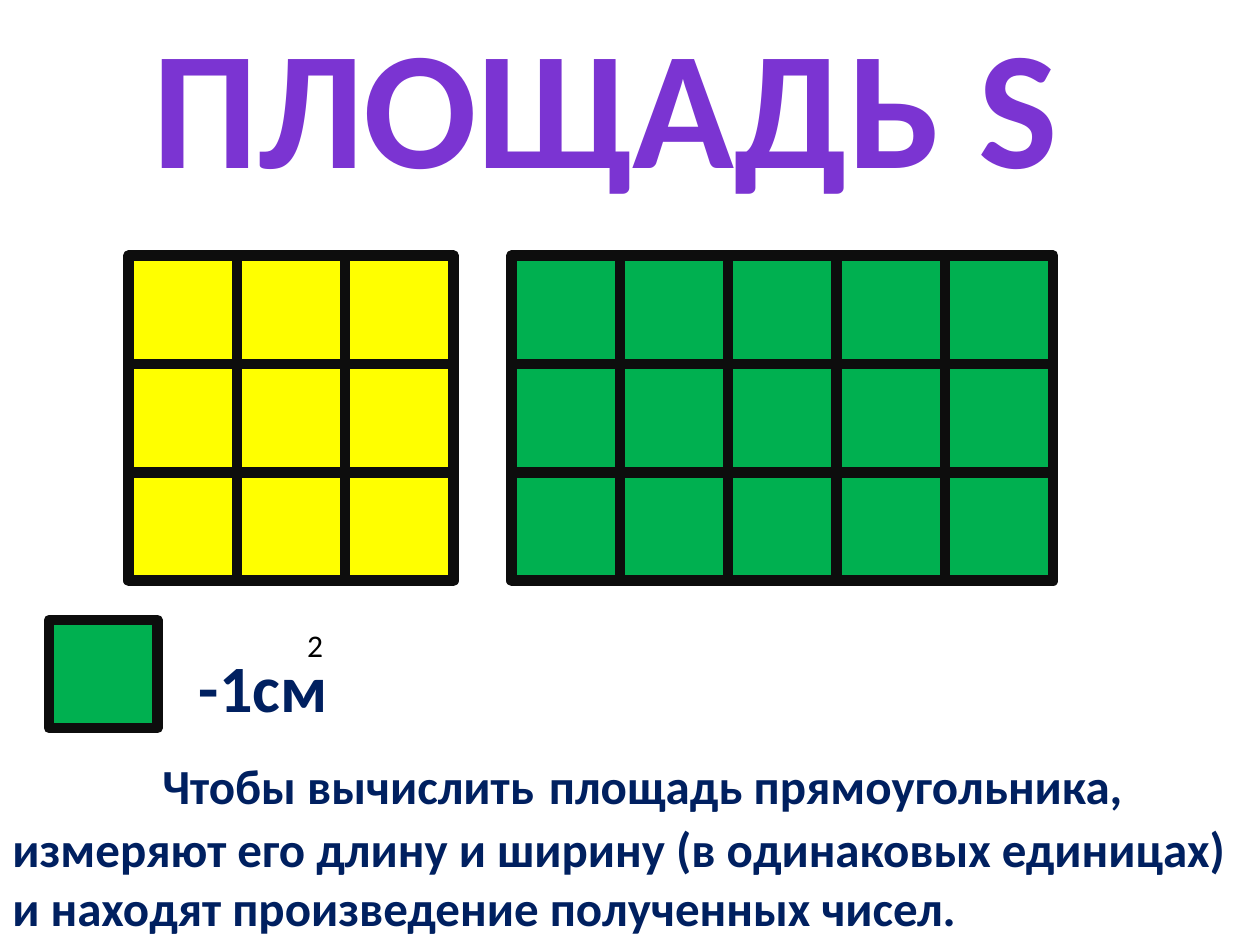
from dataclasses import dataclass

from pptx import Presentation
from pptx.dml.color import RGBColor
from pptx.enum.shapes import MSO_SHAPE
from pptx.enum.text import MSO_ANCHOR, PP_ALIGN
from pptx.slide import Slide
from pptx.text.text import Font
from pptx.util import Inches, Pt


@dataclass(frozen=True)
class Theme:
    font: str = "Calibri"
    title: str = "7B34D2"
    body: str = "002060"
    black: str = "000000"
    border: str = "0D0D0D"
    yellow: str = "FFFF00"
    green: str = "00B050"
    title_size: float = 96
    unit_size: float = 37.8
    rule_size: float = 28
    exponent_size: float = 18
    border_width: float = 6
    paragraph_gap: float = 7.5


@dataclass(frozen=True)
class SquareGrid:
    left: float
    top: float
    columns: int
    rows: int
    color: str


THEME = Theme()
WIDTH, HEIGHT = 10, 7.5
CELL = 0.86
GRIDS = (
    SquareGrid(1.02, 2.03, 3, 3, THEME.yellow),
    SquareGrid(4.06, 2.03, 5, 3, THEME.green),
    SquareGrid(0.39, 4.92, 1, 1, THEME.green),
)


def style_font(font: Font, size: float, color: str, bold: bool = True) -> None:
    font.name = THEME.font
    font.size = Pt(size)
    font.bold = bold
    font.color.rgb = RGBColor.from_string(color)


def add_title(slide: Slide) -> None:
    title = slide.shapes.title
    title.left, title.top = 0, 0
    title.width, title.height = Inches(9.61), Inches(1.61)
    frame = title.text_frame
    frame.text = "ПЛОЩАДЬ S"
    frame.vertical_anchor = MSO_ANCHOR.MIDDLE
    para = frame.paragraphs[0]
    para.alignment = PP_ALIGN.CENTER
    style_font(para.font, THEME.title_size, THEME.title)


def add_square_grid(slide: Slide, grid: SquareGrid) -> None:
    for row in range(grid.rows):
        for column in range(grid.columns):
            square = slide.shapes.add_shape(
                MSO_SHAPE.RECTANGLE,
                Inches(grid.left + column * CELL),
                Inches(grid.top + row * CELL),
                Inches(CELL),
                Inches(CELL),
            )
            square.shadow.inherit = False
            square.fill.solid()
            square.fill.fore_color.rgb = RGBColor.from_string(grid.color)
            square.line.color.rgb = RGBColor.from_string(THEME.border)
            square.line.width = Pt(THEME.border_width)


def add_explanation(slide: Slide) -> None:
    box = slide.shapes.add_textbox(0, Inches(5.08), Inches(WIDTH), Inches(2.23))
    frame = box.text_frame
    frame.word_wrap = True

    unit = frame.paragraphs[0]
    unit.text = "-1см"
    style_font(unit.font, THEME.unit_size, THEME.body)

    rule = frame.add_paragraph()
    rule.space_before = Pt(THEME.paragraph_gap)
    style_font(rule.font, THEME.rule_size, THEME.body)
    rule.add_run().text = "Чтобы вычислить"
    space = rule.add_run()
    space.text = " "
    space.font.size = Pt(THEME.unit_size)
    rule.add_run().text = (
        "площадь прямоугольника, измеряют его длину и ширину "
        "(в одинаковых единицах) и находят произведение полученных чисел."
    )

    for para, indent in ((unit, 1.48), (rule, 1.19)):
        properties = para._p.get_or_add_pPr()
        properties.set("marL", "0")
        properties.set("indent", str(Inches(indent)))


def add_exponent(slide: Slide) -> None:
    box = slide.shapes.add_textbox(Inches(2.34), Inches(4.92), Inches(0.33), Inches(0.4))
    frame = box.text_frame
    frame.word_wrap = False
    frame.text = "2"
    style_font(frame.paragraphs[0].font, THEME.exponent_size, THEME.black, bold=False)


def main() -> None:
    deck = Presentation()
    deck.slide_width, deck.slide_height = Inches(WIDTH), Inches(HEIGHT)
    page = deck.slides.add_slide(deck.slide_layouts.get_by_name("Title Only"))
    add_title(page)
    add_explanation(page)
    for grid in GRIDS:
        add_square_grid(page, grid)
    add_exponent(page)
    deck.save("out.pptx")


if __name__ == "__main__":
    main()
